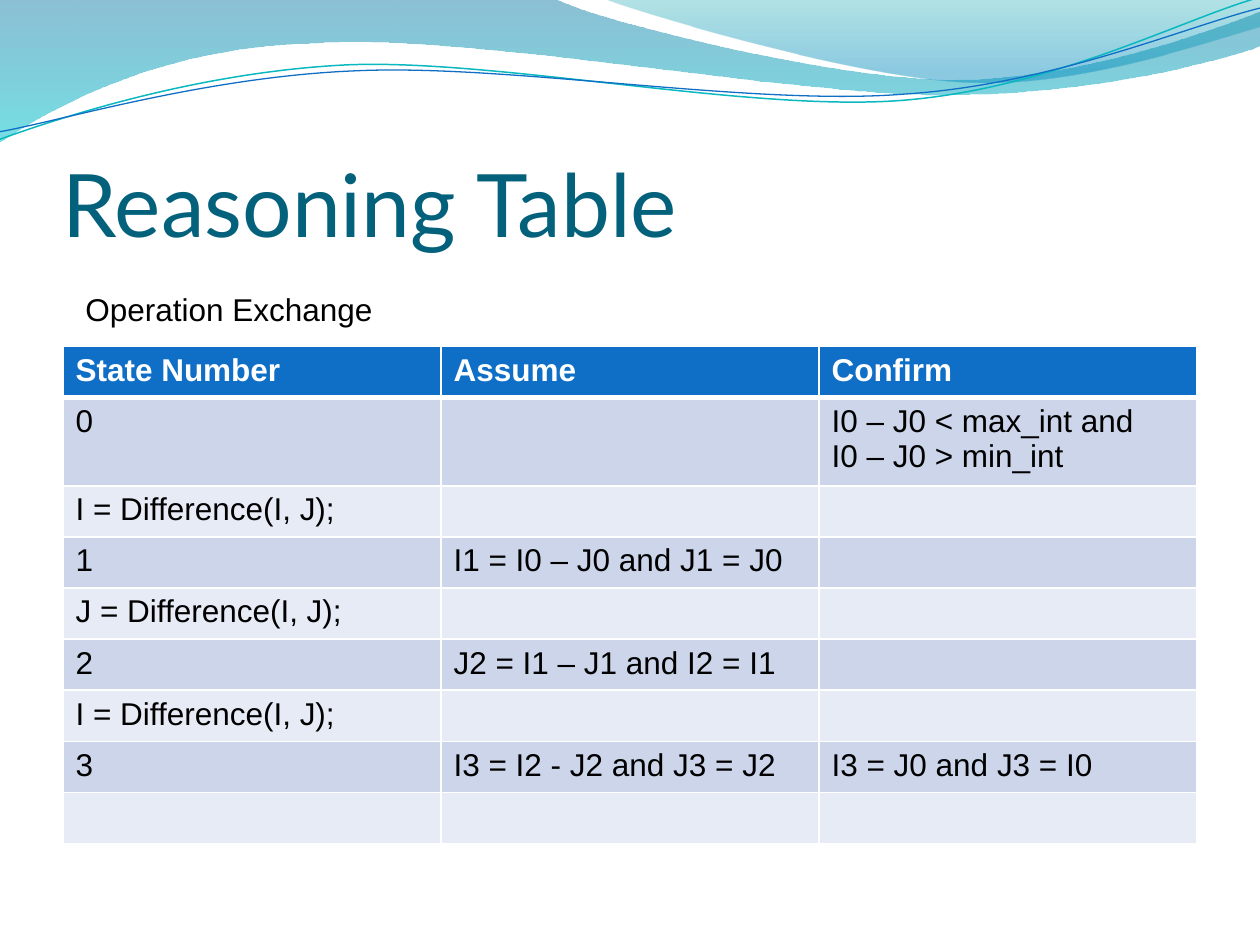
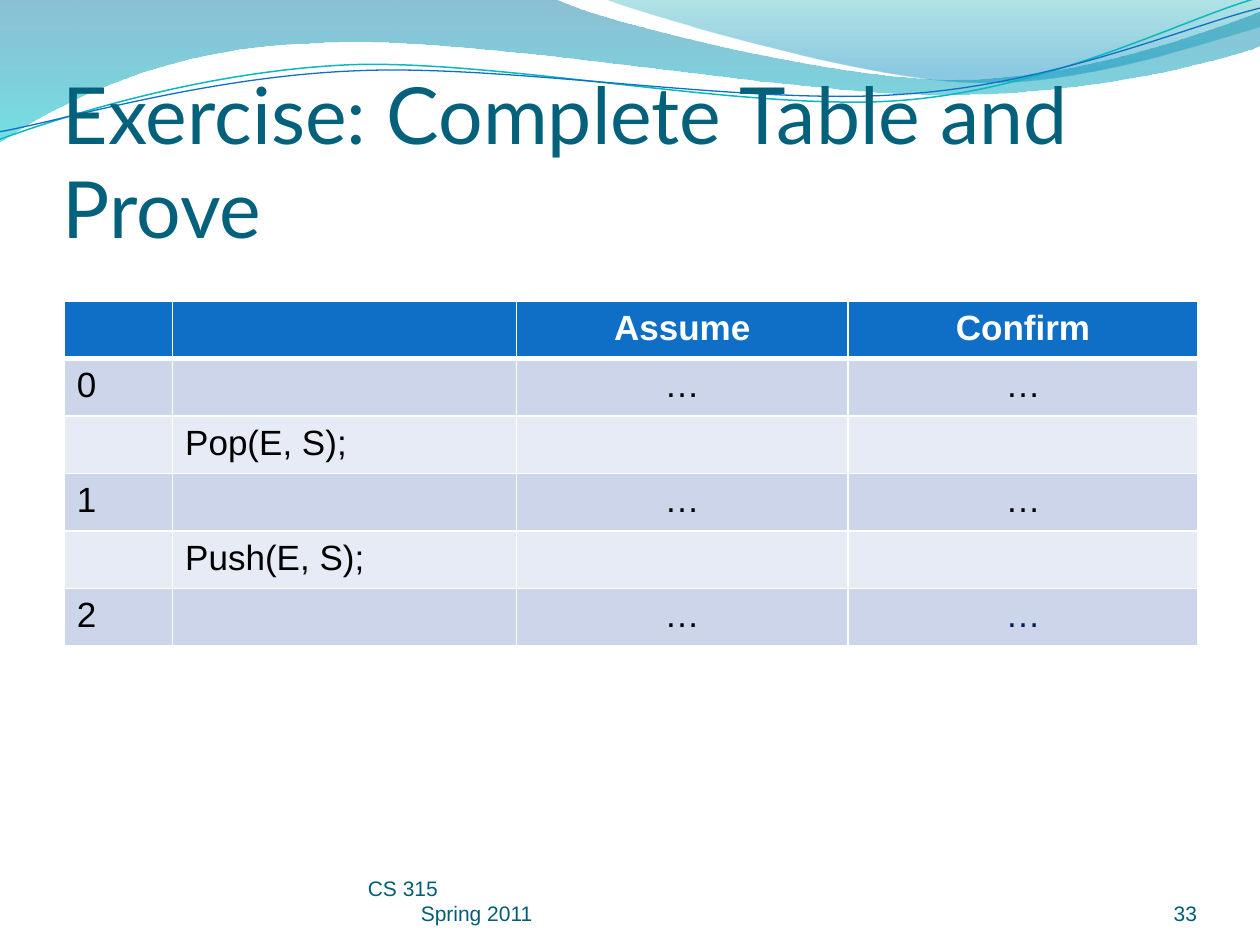
from lxml.etree import SubElement
from pptx import Presentation
from pptx.dml.color import RGBColor
from pptx.enum.text import MSO_ANCHOR, PP_ALIGN
from pptx.oxml.ns import qn
from pptx.util import Pt

PX = 9144  # one px is a hundredth of an inch
WHITE, BLACK, NAVY = "FFFFFF", "000000", "002060"
BLUE, TEAL = "0F6FC6", "0AB8BF"
TITLE_COLOR, FOOTER_COLOR = "04617B", "045D75"
BANDS = ("CCD5EA", "E7EBF5")
TITLE_FONT, BODY_FONT = "Lato", "Arial"
LEFT, CENTER, RIGHT = PP_ALIGN.LEFT, PP_ALIGN.CENTER, PP_ALIGN.RIGHT
TITLE_BOX = (50, 77, 900, 125)
STRAND_TILT = 357.3

# Each outline: start point, then lines (2 numbers) or cubic curves (6 numbers)
LONG_WAVE_BOX = (-1, -1, 1002, 114)
LONG_WAVE = [(0, 0), (440, -1), (476, 17, 664, 63, 758, 63),
             (853, 63, 958, 26, 1000, 9), (1001, 36),
             (983, 44, 870, 76, 746, 75), (622, 75, 382, 28, 257, 34),
             (129, 36, 46, 83, -1, 113), (0, 0)]
RIGHT_WAVE_BOX = (479, -1, 521, 70)
RIGHT_WAVE = [(479, -1), (509, 11, 682, 62, 769, 65),
              (856, 69, 961, 32, 1000, 21), (1000, 0), (479, -1)]
# Strands are level here and tilted afterwards
TEAL_STRAND_BOX = (-2, 22, 1002, 71)
TEAL_STRAND = [(-2, 87), (47, 72, 158, 41, 277, 41),
               (396, 42, 591, 93, 712, 90), (832, 87, 940, 36, 1000, 22)]
BLUE_STRAND_BOX = (-2, 30, 1003, 58)
BLUE_STRAND = [(-2, 81), (46, 75, 164, 45, 283, 46),
               (403, 46, 596, 89, 716, 85), (835, 83, 942, 42, 1002, 30)]


def px(*lengths):
    return [round(length * PX) for length in lengths]


def rgb(color):
    return RGBColor.from_string(color)


def style(paragraph, size, color, font=BODY_FONT, bold=False, align=LEFT):
    paragraph.alignment = align
    paragraph.font.size = Pt(size)
    paragraph.font.name = font
    paragraph.font.bold = bold
    paragraph.font.color.rgb = rgb(color)


def add_text(slide, box, text, size, color, font=BODY_FONT, align=LEFT,
             anchor=MSO_ANCHOR.BOTTOM, insets=(0, 0, 0, 0), wrap=True):
    frame = slide.shapes.add_textbox(*px(*box)).text_frame
    frame.text = text
    frame.word_wrap = wrap
    frame.vertical_anchor = anchor
    (frame.margin_left, frame.margin_top,
     frame.margin_right, frame.margin_bottom) = px(*insets)
    for paragraph in frame.paragraphs:
        style(paragraph, size, color, font, align=align)
    return frame


# Wave band across the top

def add_outline(slide, box, outline, closed):
    left, top, width, height = box
    builder = slide.shapes.build_freeform(*px(*outline[0]))
    builder.add_line_segments([px(*part[-2:]) for part in outline[1:]], close=closed)
    shape = builder.convert_to_shape()
    shape.shadow.inherit = False
    shape.left, shape.top, shape.width, shape.height = px(*box)

    # Redraw the path inside the box with true curves
    path_xml = next(shape._element.iter(qn("a:path")))
    for step in list(path_xml):
        path_xml.remove(step)
    for side, length in zip("wh", px(width, height)):
        path_xml.set(side, str(length))
    for index, part in enumerate(outline):
        tag = "moveTo" if index == 0 else "lnTo" if len(part) == 2 else "cubicBezTo"
        step = SubElement(path_xml, qn(f"a:{tag}"))
        for x, y in zip(part[::2], part[1::2]):
            across, down = px(x - left, y - top)
            SubElement(step, qn("a:pt"), x=str(across), y=str(down))
    if closed:
        SubElement(path_xml, qn("a:close"))
    return shape


def add_wave(slide, box, outline, stops):
    """Stops are (position, colour, opacity in percent), from top to bottom."""
    wave = add_outline(slide, box, outline, closed=True)
    wave.line.fill.background()
    wave.fill.gradient()
    wave.fill.gradient_angle = 270
    for stop, (position, color, _) in zip(wave.fill.gradient_stops, stops):
        stop.position = position
        stop.color.rgb = rgb(color)
    colors = wave._element.spPr.iter(qn("a:srgbClr"))
    for color, (_, _, opacity) in zip(list(colors), stops):
        SubElement(color, qn("a:alpha"), val=str(opacity * 1000))


def add_strand(slide, box, outline, color, width):
    strand = add_outline(slide, box, outline, closed=False)
    strand.rotation = STRAND_TILT
    strand.fill.background()
    strand.line.color.rgb = rgb(color)
    strand.line.width = Pt(width)


def add_wave_band(slide):
    add_wave(slide, LONG_WAVE_BOX, LONG_WAVE,
             [(0, "0074A1", 45), (1, "00C6CF", 55)])
    add_wave(slide, RIGHT_WAVE_BOX, RIGHT_WAVE,
             [(0, "00A1A9", 30), (0.8, "008BBF", 45)])
    add_strand(slide, TEAL_STRAND_BOX, TEAL_STRAND, TEAL, 0.85)
    add_strand(slide, BLUE_STRAND_BOX, BLUE_STRAND, BLUE, 0.75)


def add_titled_slide(deck, title, size):
    slide = deck.slides.add_slide(deck.slide_layouts[6])
    add_wave_band(slide)
    add_text(slide, TITLE_BOX, title, size, TITLE_COLOR, TITLE_FONT,
             insets=(0, 5, 0, 0))
    return slide


# Banded tables

def add_borders(cell, is_header):
    widths = {"lnL": 1, "lnR": 1, "lnT": 1, "lnB": 3 if is_header else 1}
    properties = cell._tc.get_or_add_tcPr()
    for side, width in widths.items():
        line = SubElement(properties, qn(f"a:{side}"), w=str(Pt(width)))
        fill = SubElement(line, qn("a:solidFill"))
        SubElement(fill, qn("a:srgbClr"), val=WHITE)


def add_state_table(slide, left, top, widths, height, rows, size, aligns,
                    inset=5, accents=None):
    """Height is that of all rows before any of them grows with its text."""
    accents = accents or {}
    table = slide.shapes.add_table(
        len(rows), len(widths), *px(left, top, sum(widths), height)).table
    for column, width in zip(table.columns, px(*widths)):
        column.width = width
    for r, texts in enumerate(rows):
        table.rows[r].height = px(height / len(rows))[0]
        for c, text in enumerate(texts):
            cell = table.cell(r, c)
            add_borders(cell, r == 0)
            cell.fill.solid()
            cell.fill.fore_color.rgb = rgb(BANDS[(r - 1) % 2] if r else BLUE)
            if not text:
                continue
            cell.margin_top, cell.margin_bottom = px(inset, inset)
            cell.text = text
            color = accents.get((r, c), BLACK if r else WHITE)
            for paragraph in cell.text_frame.paragraphs:
                style(paragraph, size, color, bold=r == 0, align=aligns[c])


def add_footer(slide, course, term, number):
    frame = add_text(slide, (292, 695, 367, 40), f"{course}\v{term}", 12, FOOTER_COLOR)
    indent = px(42)[0]
    properties = frame.paragraphs[0]._p.get_or_add_pPr()
    properties.set("marL", str(indent))
    properties.set("indent", str(-indent))
    add_text(slide, (867, 695, 83, 40), number, 12, FOOTER_COLOR, align=RIGHT)


# Slides

def build_reasoning_slide(deck):
    slide = add_titled_slide(deck, "Reasoning Table", 50)
    rows = [
        ("State Number", "Assume", "Confirm"),
        ("0", "", "I0 – J0 < max_int and\nI0 – J0 > min_int"),
        ("I = Difference(I, J);", "", ""),
        ("1", "I1 = I0 – J0 and J1 = J0", ""),
        ("J = Difference(I, J);", "", ""),
        ("2", "J2 = I1 – J1 and I2 = I1", ""),
        ("I = Difference(I, J);", "", ""),
        ("3", "I3 = I2 - J2 and J3 = J2", "I3 = J0 and J3 = I0"),
        ("", "", ""),
    ]
    add_state_table(slide, 50, 275, [300] * 3, 365, rows, 18, [LEFT] * 3)
    add_text(slide, (58, 225, 250, 40), "Operation Exchange", 18, BLACK,
             anchor=MSO_ANCHOR.TOP, insets=(10, 5, 10, 5), wrap=False)


def build_exercise_slide(deck):
    slide = add_titled_slide(deck, "Exercise: Complete Table and Prove", 45)
    rows = [
        ("", "", "Assume", "Confirm"),
        ("0", "", "…", "…"),
        ("", "Pop(E, S);", "", ""),
        ("1", "", "…", "…"),
        ("", "Push(E, S);", "", ""),
        ("2", "", "…", "…"),
    ]
    add_state_table(slide, 51, 239, [86, 273, 263, 278], 274, rows, 20,
                    [LEFT, LEFT, CENTER, CENTER], inset=6,
                    accents={(5, 3): NAVY})
    add_footer(slide, "CS 315", "Spring 2011", "33")


def main():
    deck = Presentation()
    deck.slide_width, deck.slide_height = px(1000, 750)
    build_reasoning_slide(deck)
    build_exercise_slide(deck)
    deck.save("out.pptx")


if __name__ == "__main__":
    main()
